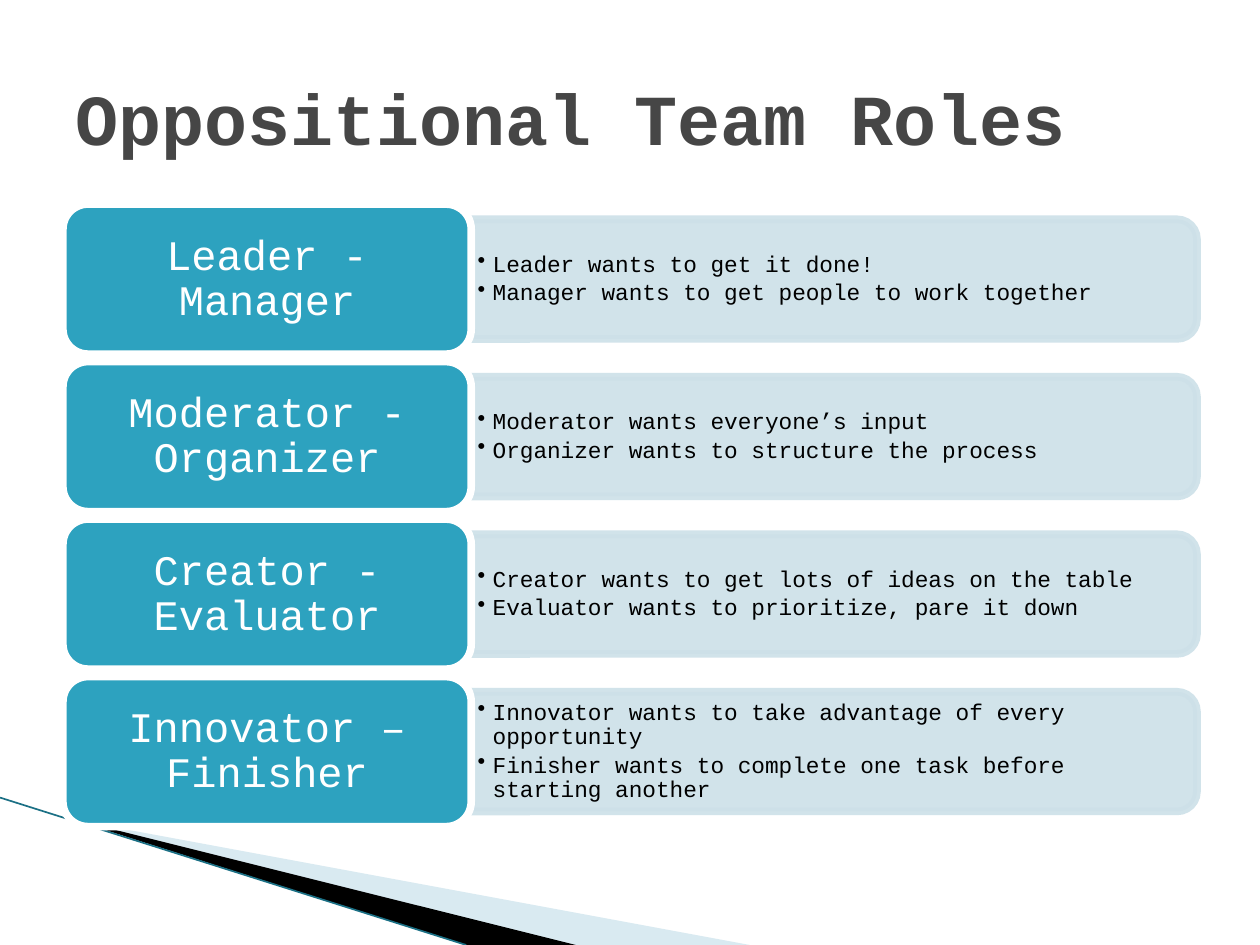
from lxml.etree import SubElement
from pptx import Presentation
from pptx.dml.color import RGBColor
from pptx.enum.shapes import MSO_CONNECTOR, MSO_SHAPE
from pptx.enum.text import MSO_ANCHOR, PP_ALIGN
from pptx.oxml.ns import qn
from pptx.util import Inches, Pt

FONT = "Courier New"
TEAL = RGBColor(0x2D, 0xA2, 0xBF)
PALE = RGBColor(0xCD, 0xE0, 0xE8)
MIST = RGBColor(0xA0, 0xCB, 0xDC)
DEEP = RGBColor(0x1B, 0x70, 0x85)
GREY = RGBColor(0x46, 0x46, 0x46)
BLACK = RGBColor(0, 0, 0)
WHITE = RGBColor(255, 255, 255)

WIDE, HIGH = 10, 7.5
LEFT, TOP, PITCH = 0.5, 1.62, 1.25
LABEL_W, LABEL_H = 3.24, 1.19
BAR_W, BAR_H = 5.76, 0.95
EDGE = 4.33

ROLES = [
    ("Leader - Manager",
     ["Leader wants to get it done!",
      "Manager wants to get people to work together"]),
    ("Moderator - Organizer",
     ["Moderator wants everyone’s input",
      "Organizer wants to structure the process"]),
    ("Creator - Evaluator",
     ["Creator wants to get lots of ideas on the table",
      "Evaluator wants to prioritize, pare it down"]),
    ("Innovator – Finisher",
     ["Innovator wants to take advantage of every opportunity",
      "Finisher wants to complete one task before starting another"]),
]


def fade(part, share):
    """Set the opacity of every solid colour inside an XML part."""
    for tint in part.iter(qn("a:srgbClr")):
        SubElement(tint, qn("a:alpha"), val=str(share * 1000))


def add_run(para, text, size, color, bold=False):
    run = para.add_run()
    run.text = text
    font = run.font
    font.name, font.size, font.bold = FONT, Pt(size), bold
    font.color.rgb = color


def add_wedge(slide, points, color):
    first, *rest = [(Inches(x), Inches(y)) for x, y in points]
    path = slide.shapes.build_freeform(*first, scale=1)
    path.add_line_segments(rest, close=True)
    wedge = path.convert_to_shape()
    wedge.shadow.inherit = False
    wedge.fill.solid()
    wedge.fill.fore_color.rgb = color
    wedge.line.fill.background()
    return wedge


def add_swoosh(slide):
    """Draw the slanted corner decoration."""
    pale = add_wedge(slide, [(0.55, 6.5), (5.95, HIGH), (4.56, HIGH)], MIST)
    fade(pale.fill._xPr, 40)
    add_wedge(slide, [(0.53, 6.49), (4.57, HIGH), (3.7, HIGH)], BLACK)
    line = slide.shapes.add_connector(
        MSO_CONNECTOR.STRAIGHT, 0, Inches(6.33), Inches(3.7), Inches(HIGH))
    line.line.color.rgb = DEEP
    line.line.width = Pt(0.95)
    SubElement(line._element.spPr, qn("a:effectLst"))


def add_block(slide, kind, box, fill, edge):
    block = slide.shapes.add_shape(kind, *map(Inches, box))
    block.shadow.inherit = False
    block.fill.solid()
    block.fill.fore_color.rgb = fill
    block.line.color.rgb = edge
    block.line.width = Pt(EDGE)
    return block


def add_bar(slide, mid):
    """Add a bar with round right corners, centred on the height mid."""
    x = LEFT + LABEL_W + (BAR_W - BAR_H) / 2
    bar = add_block(slide, MSO_SHAPE.ROUND_2_SAME_RECTANGLE,
                    (x, mid - BAR_W / 2, BAR_H, BAR_W), PALE, PALE)
    bar.rotation = 90
    fade(bar._element.spPr, 90)


def add_text(slide, box):
    frame = slide.shapes.add_textbox(*map(Inches, box)).text_frame
    frame.word_wrap = True
    frame.vertical_anchor = MSO_ANCHOR.MIDDLE
    return frame


def add_points(slide, mid, points):
    high = 0.86
    frame = add_text(slide, (LEFT + LABEL_W, mid - high / 2, 5.71, high))
    frame.margin_left = frame.margin_right = Inches(0.05)
    frame.margin_top = frame.margin_bottom = Inches(0.03)
    for i, point in enumerate(points):
        para = frame.add_paragraph() if i else frame.paragraphs[0]
        props = para._p.get_or_add_pPr()
        props.set("marL", str(Inches(0.12)))
        props.set("indent", str(-Inches(0.12)))
        SubElement(props, qn("a:buChar"), char="•")
        para.line_spacing = 0.9
        para.space_after = Pt(2)
        add_run(para, point, 13, BLACK)


def add_label(slide, mid, text):
    label = add_block(slide, MSO_SHAPE.ROUNDED_RECTANGLE,
                      (LEFT, mid - LABEL_H / 2, LABEL_W, LABEL_H), TEAL, WHITE)
    frame = label.text_frame
    frame.word_wrap = True
    frame.vertical_anchor = MSO_ANCHOR.MIDDLE
    para = frame.paragraphs[0]
    para.alignment = PP_ALIGN.CENTER
    para.line_spacing = 0.9
    add_run(para, text, 24, WHITE)


def main():
    deck = Presentation()
    deck.slide_width, deck.slide_height = Inches(WIDE), Inches(HIGH)
    slide = deck.slides.add_slide(deck.slide_layouts[6])
    add_swoosh(slide)
    for row, (name, points) in enumerate(ROLES):
        mid = TOP + row * PITCH + LABEL_H / 2
        add_bar(slide, mid)
        add_points(slide, mid, points)
        add_label(slide, mid, name)
    title = add_text(slide, (LEFT, 0.3, WIDE - 2 * LEFT, 1.25))
    add_run(title.paragraphs[0], "Oppositional Team Roles", 41, GREY, True)
    deck.save("out.pptx")


if __name__ == "__main__":
    main()
